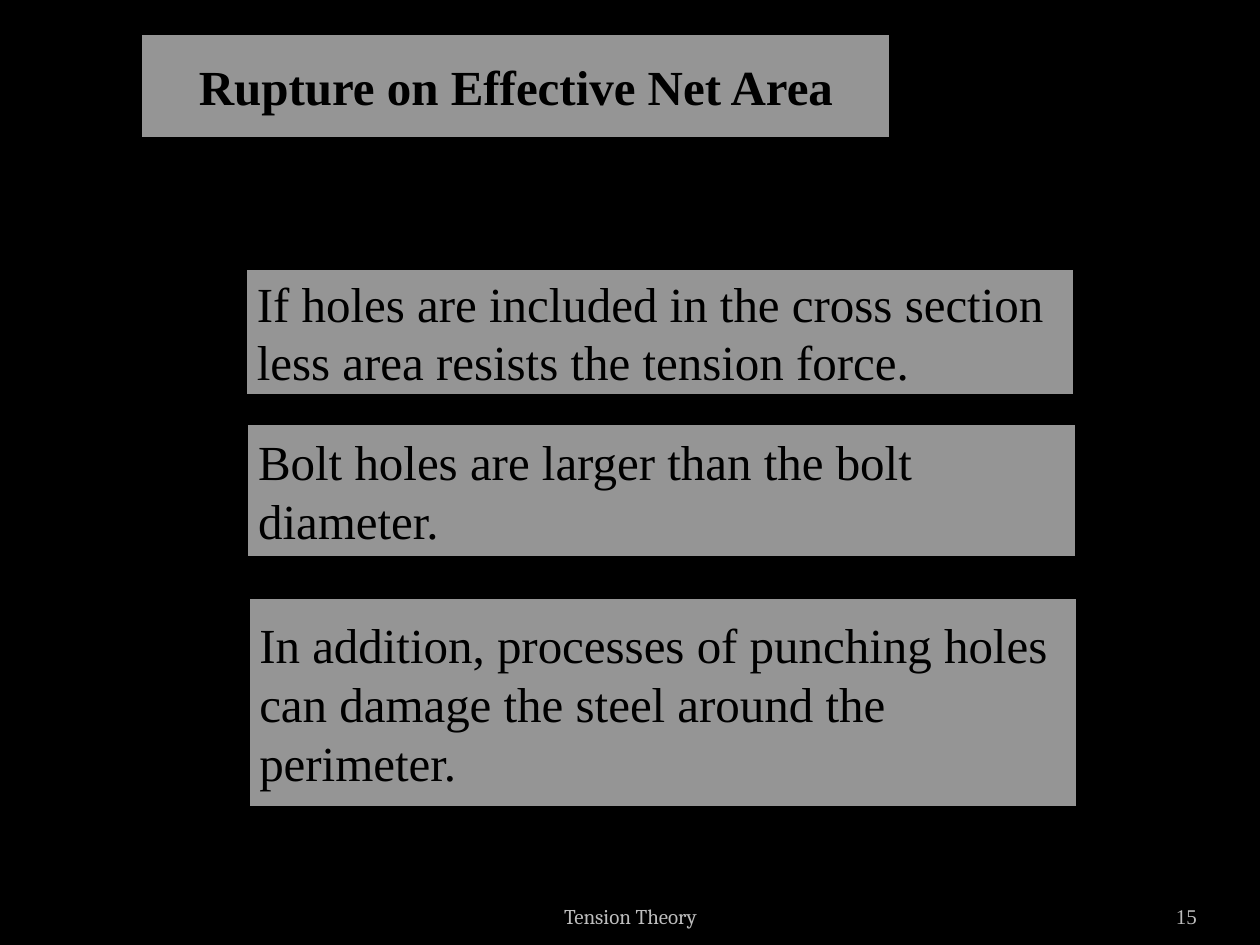
import pptx
import pptx.util
import pptx.dml.color
import pptx.enum.shapes
import pptx.enum.text
import pptx.oxml
import pptx.oxml.ns
from lxml import etree

Pt = pptx.util.Pt
RGBColor = pptx.dml.color.RGBColor
ALIGN = pptx.enum.text.PP_ALIGN
ANCHOR = pptx.enum.text.MSO_ANCHOR

BLACK = RGBColor(0x00, 0x00, 0x00)
PANEL = RGBColor(0xF2, 0xF2, 0xF2)
NUMBER_GRAY = RGBColor(0xBC, 0xBC, 0xBC)
FOOTER_GRAY = RGBColor(0xBD, 0xBD, 0xBD)
SERIF = "Times New Roman"
PANEL_OPACITY = 62

# Statements with left, top, width, height in points
STATEMENTS = [
    ("If holes are included in the cross section less area resists "
     "the tension force.", (139.7, 152.6, 475.2, 74.2)),
    ("Bolt holes are larger than the bolt diameter.",
     (140.4, 241.2, 475.2, 77.8)),
    ("In addition, processes of punching holes can damage the steel "
     "around the perimeter.", (141.1, 340.6, 475.2, 121.7)),
]


def write_text(shape, text, size, color, font=SERIF, align=ALIGN.LEFT,
               anchor=ANCHOR.MIDDLE, bold=False):
    frame = shape.text_frame
    frame.word_wrap = True
    frame.auto_size = pptx.enum.text.MSO_AUTO_SIZE.NONE
    frame.vertical_anchor = anchor
    frame.text = text
    para = frame.paragraphs[0]
    para.alignment = align
    para.font.name = font
    para.font.size = Pt(size)
    para.font.bold = bold
    para.font.color.rgb = color


def style_panel(shape):
    """Translucent light fill with a heavy black outline."""
    shape.fill.solid()
    shape.fill.fore_color.rgb = PANEL
    color = shape.fill._xPr.find(".//" + pptx.oxml.ns.qn("a:srgbClr"))
    alpha = etree.SubElement(color, pptx.oxml.ns.qn("a:alpha"))
    alpha.set("val", str(PANEL_OPACITY * 1000))
    shape.line.color.rgb = BLACK
    shape.line.width = Pt(3)


def add_title(page, text, box):
    title = page.shapes.title
    title.left, title.top, title.width, title.height = map(Pt, box)
    style_panel(title)
    write_text(title, text, 28, BLACK, align=ALIGN.CENTER, bold=True)


def add_statement(page, text, box):
    panel = page.shapes.add_shape(
        pptx.enum.shapes.MSO_SHAPE.RECTANGLE, *map(Pt, box))
    panel.shadow.inherit = False
    style_panel(panel)
    write_text(panel, text, 28, BLACK)


def add_footer_text(page, text, box, color, font, align, side_inset):
    label = page.shapes.add_textbox(*map(Pt, box))
    label.text_frame.margin_left = Pt(side_inset)
    label.text_frame.margin_right = Pt(side_inset)
    write_text(label, text, 12, color, font, align, ANCHOR.BOTTOM)


def main():
    deck = pptx.Presentation()
    deck.slide_width, deck.slide_height = Pt(720), Pt(540)
    page = deck.slides.add_slide(deck.slide_layouts.get_by_name("Title Only"))
    page.background.fill.solid()
    page.background.fill.fore_color.rgb = BLACK

    # Heading and statements
    add_title(page, "Rupture on Effective Net Area", (79.9, 18.7, 429.8, 61.2))
    for text, box in STATEMENTS:
        add_statement(page, text, box)

    # Footer and page number
    add_footer_text(page, "Tension Theory", (246.2, 505.4, 228.2, 28.8),
                    FOOTER_GRAY, "Cambria", ALIGN.CENTER, 7.2)
    add_footer_text(page, "15", (624.2, 505.4, 59.8, 28.8),
                    NUMBER_GRAY, SERIF, ALIGN.RIGHT, 0)

    deck.save("out.pptx")


if __name__ == "__main__":
    main()
